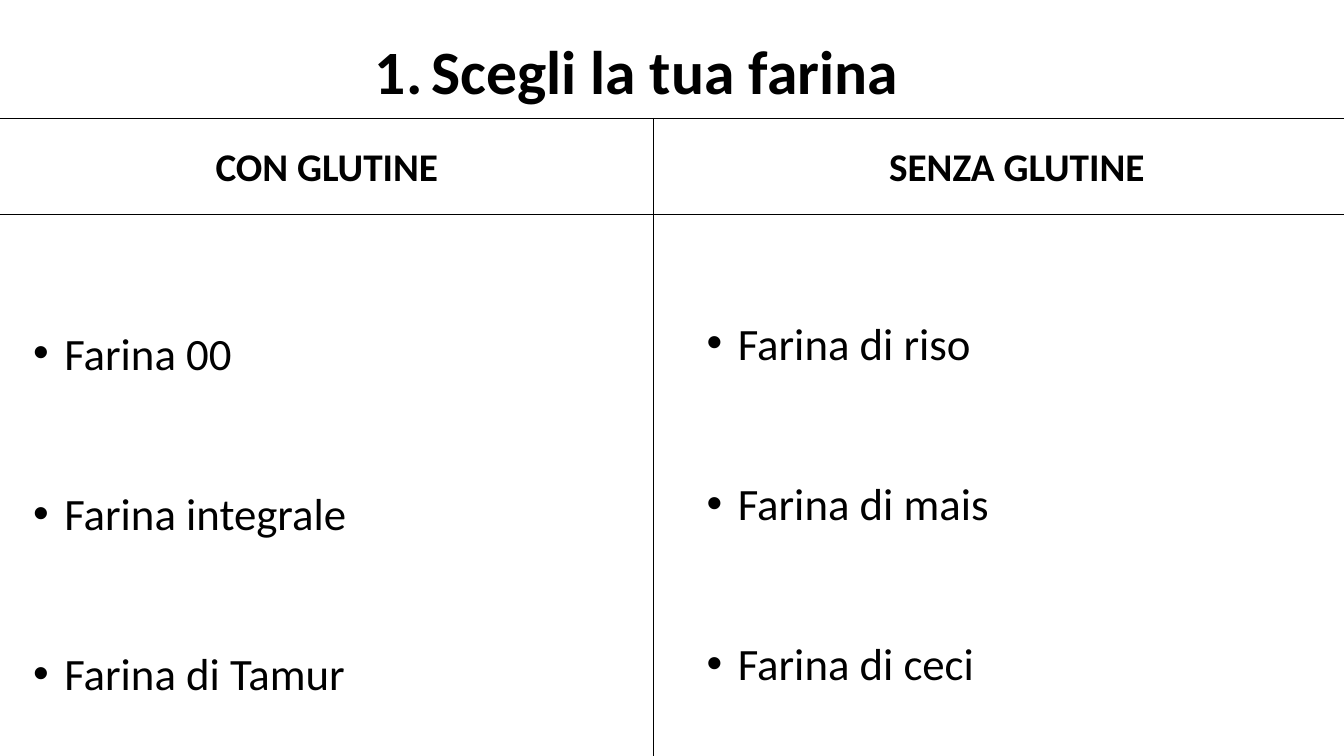
from lxml.etree import SubElement
from pptx import Presentation
from pptx.dml.color import RGBColor
from pptx.enum.shapes import MSO_CONNECTOR
from pptx.enum.text import MSO_ANCHOR
from pptx.oxml.ns import qn
from pptx.util import Inches, Pt

BLACK = RGBColor(0, 0, 0)
FONT = "Calibri"
WIDE, HIGH = 13.33, 7.5
SPLIT, TOP, BASE = 6.48, 1.17, 2.13

TITLE = "Scegli la tua farina"
HEADS = [
    ("CON GLUTINE", 2.04, 2.44),
    ("SENZA GLUTINE", 8.72, 2.76),
]
LISTS = [
    (["Farina 00", "Farina integrale", "Farina di Tamur"], (0.23, 2.58, 3.86, 4.41)),
    (["Farina di riso", "Farina di mais", "Farina di ceci"], (6.91, 3.02, 4.56, 3.87)),
]
RULES = [
    (SPLIT, TOP, SPLIT, HIGH),
    (0, TOP, WIDE, TOP),
    (0, BASE, WIDE, BASE),
]


def add_text(slide, lines, area, size, bold=False, wrap=True):
    box = slide.shapes.add_textbox(*map(Inches, area))
    frame = box.text_frame
    frame.word_wrap = wrap
    frame.text = "\n".join(lines)
    for para in frame.paragraphs:
        font = para.runs[0].font
        font.name, font.size, font.bold = FONT, Pt(size), bold
        font.color.rgb = BLACK
    return frame


def add_mark(para, indent, tag, **attrs):
    props = para._p.get_or_add_pPr()
    props.set("marL", str(Inches(indent)))
    props.set("indent", str(-Inches(indent)))
    face = "+mj-lt" if tag == "a:buAutoNum" else "Arial"
    SubElement(props, qn("a:buFont")).set("typeface", face)
    SubElement(props, qn(tag), attrs)


def add_rule(slide, ends):
    line = slide.shapes.add_connector(MSO_CONNECTOR.STRAIGHT, *map(Inches, ends))
    line.line.color.rgb = BLACK
    line.line.width = Pt(0.5)
    SubElement(line._element.spPr, qn("a:effectLst"))


def main():
    deck = Presentation()
    deck.slide_width, deck.slide_height = Inches(WIDE), Inches(HIGH)
    slide = deck.slides.add_slide(deck.slide_layouts[6])

    title = add_text(slide, [TITLE], (3.62, 0.36, 9.1, 0.92), 44, bold=True)
    para = title.paragraphs[0]
    para.line_spacing = 0.9
    para.space_before = Pt(10)
    add_mark(para, 0.56, "a:buAutoNum", type="arabicPeriod")

    for items, area in LISTS:
        frame = add_text(slide, items, area, 32)
        frame.vertical_anchor = MSO_ANCHOR.BOTTOM
        for rank, para in enumerate(frame.paragraphs):
            if rank:
                para.space_before = Pt(76)
            add_mark(para, 0.31, "a:buChar", char="•")

    for ends in RULES:
        add_rule(slide, ends)

    for head, left, width in HEADS:
        add_text(slide, [head], (left, 1.36, width, 0.57), 28, bold=True, wrap=False)

    deck.save("out.pptx")


if __name__ == "__main__":
    main()
